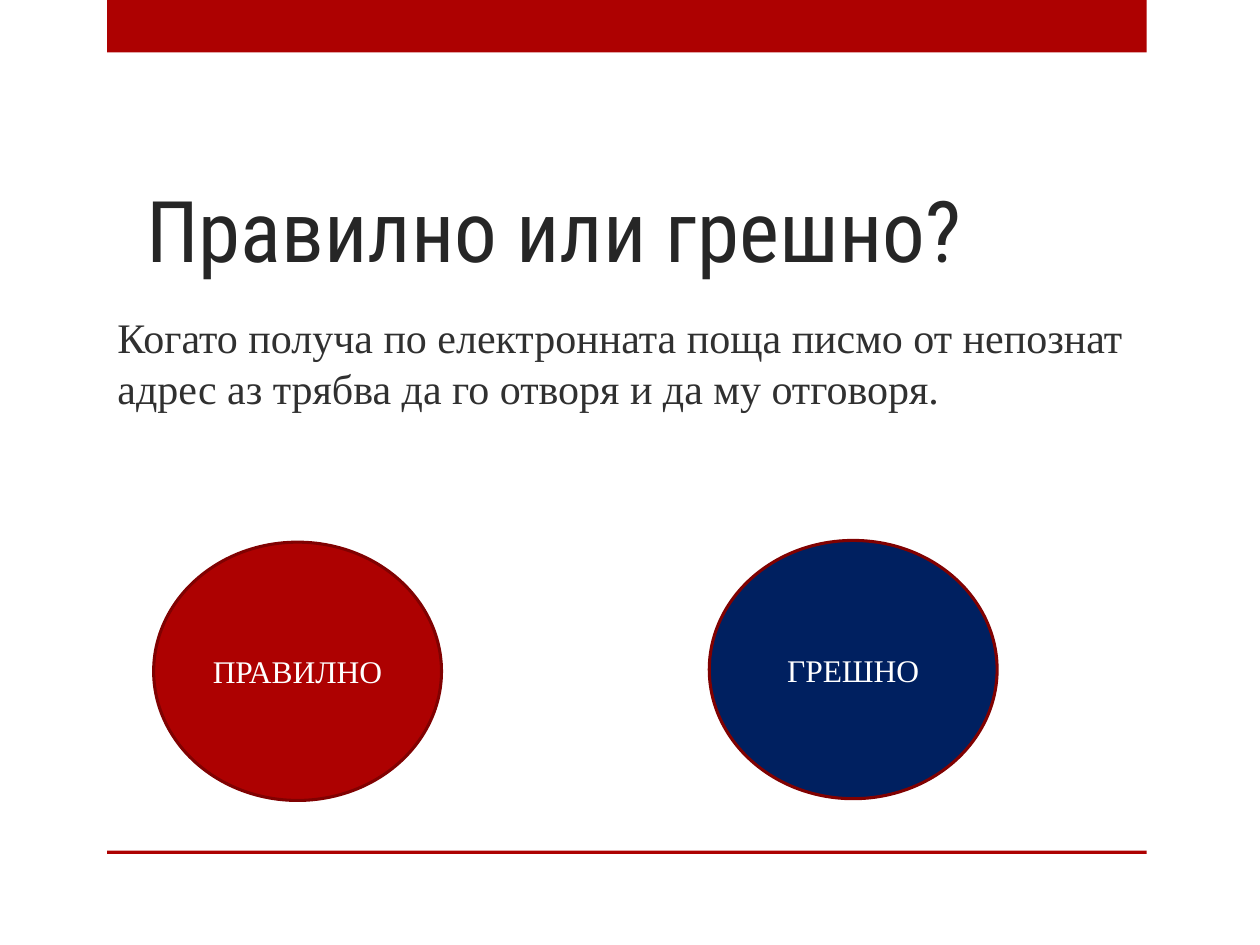
from pptx import Presentation
from pptx.dml.color import RGBColor
from pptx.enum.shapes import MSO_SHAPE
from pptx.enum.text import MSO_ANCHOR, PP_ALIGN
from pptx.util import Pt

RED = RGBColor(0xAD, 0x01, 0x01)
DARK_RED = RGBColor(0x80, 0x01, 0x01)
NAVY = RGBColor(0x00, 0x20, 0x60)
TITLE_INK = RGBColor(0x26, 0x26, 0x26)
BODY_INK = RGBColor(0x30, 0x30, 0x30)
WHITE = RGBColor(0xFF, 0xFF, 0xFF)

TITLE_FONT = "Roboto Condensed"
BODY_FONT = "Times New Roman"


def write(frame, text, font, size, color, anchor, align=PP_ALIGN.LEFT):
    frame.word_wrap = True
    frame.vertical_anchor = anchor
    paragraph = frame.paragraphs[0]
    paragraph.text = text
    paragraph.alignment = align
    paragraph.font.name = font
    paragraph.font.size = Pt(size)
    paragraph.font.color.rgb = color


def add_filled(slide, kind, box, fill):
    shape = slide.shapes.add_shape(kind, *map(Pt, box))
    shape.shadow.inherit = False
    shape.fill.solid()
    shape.fill.fore_color.rgb = fill
    return shape


def add_band(slide, box):
    band = add_filled(slide, MSO_SHAPE.RECTANGLE, box, RED)
    band.line.fill.background()


def add_text(slide, box, text, font, size, color, anchor):
    frame = slide.shapes.add_textbox(*map(Pt, box)).text_frame
    write(frame, text, font, size, color, anchor)


def add_answer(slide, box, label, fill):
    answer = add_filled(slide, MSO_SHAPE.OVAL, box, fill)
    answer.line.color.rgb = DARK_RED
    answer.line.width = Pt(1.75)
    write(answer.text_frame, label, BODY_FONT, 18, WHITE,
          MSO_ANCHOR.MIDDLE, PP_ALIGN.CENTER)


def main():
    deck = Presentation()
    deck.slide_width, deck.slide_height = Pt(720), Pt(540)
    slide = deck.slides.add_slide(deck.slide_layouts[6])

    # Top band and bottom rule
    add_band(slide, (61.2, 0, 594, 30))
    add_band(slide, (61.2, 486, 594, 2))

    # Statement and title
    add_text(slide, (60, 54, 594, 306),
             "Когато получа по електронната поща писмо от непознат адрес "
             "аз трябва да го отворя и да му отговоря.",
             BODY_FONT, 24, BODY_INK, MSO_ANCHOR.MIDDLE)
    add_text(slide, (76.5, 37.5, 534, 126), "Правилно или грешно?",
             TITLE_FONT, 48.6, TITLE_INK, MSO_ANCHOR.BOTTOM)

    # Answers
    add_answer(slide, (87.8, 309.8, 164.5, 147.6), "ПРАВИЛНО", RED)
    add_answer(slide, (405.3, 308.8, 164.5, 147.6), "ГРЕШНО", NAVY)

    deck.save("out.pptx")


if __name__ == "__main__":
    main()
